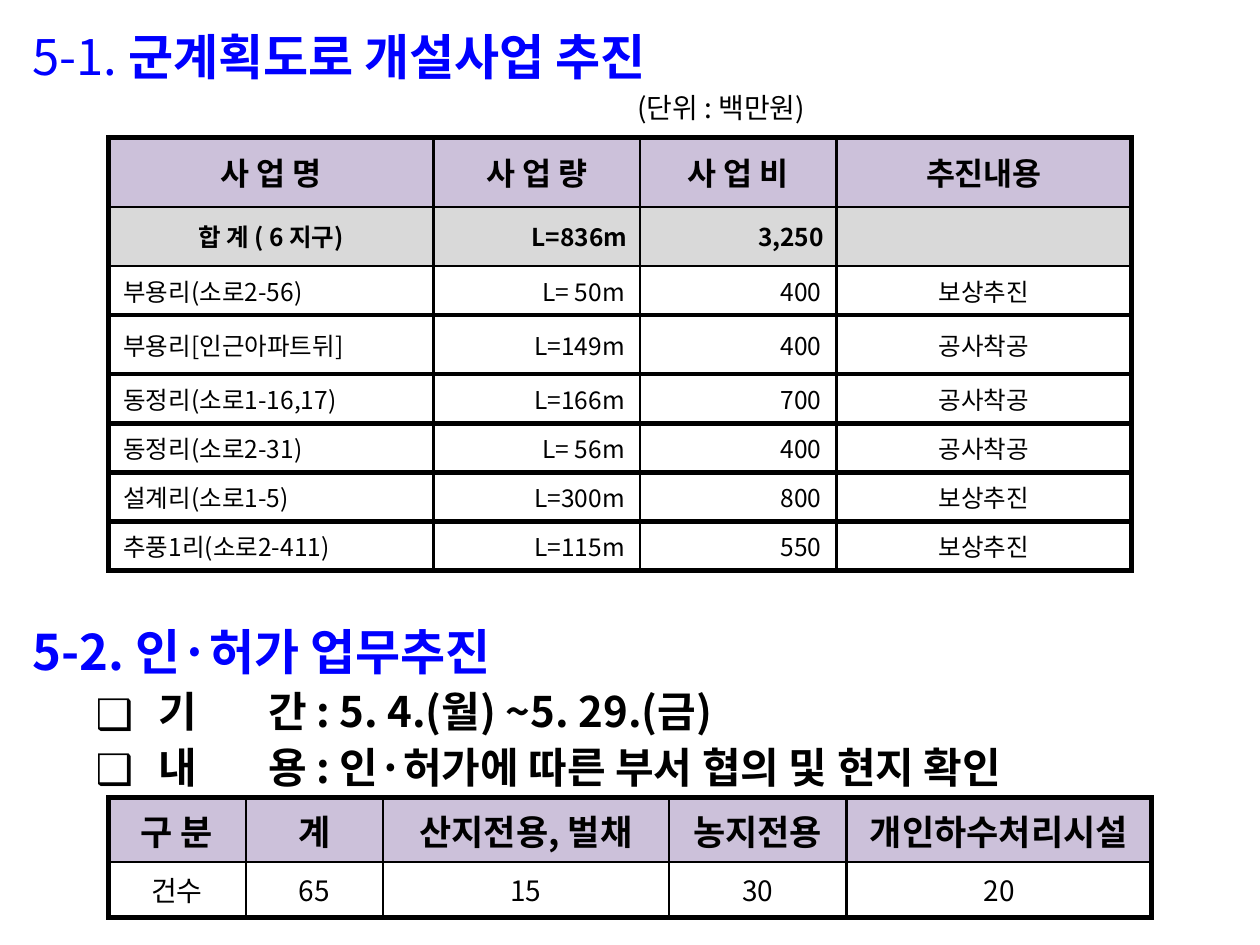
"""Build the county road and permit work slide."""
from lxml import etree
from pptx import Presentation
from pptx import util as u
from pptx.dml.color import RGBColor
from pptx.enum import text
from pptx.oxml.ns import qn

FONT = "Noto Sans CJK KR"
COLORS = {"title": "0000FF", "ink": "000000", "head": "CCC1DA", "total": "D9D9D9"}
THICK, THIN = 3, 1.41
LEFT, CENTER, RIGHT = text.PP_ALIGN.LEFT, text.PP_ALIGN.CENTER, text.PP_ALIGN.RIGHT

ROADS = [
    ("사 업 명", "사 업 량", "사 업 비", "추진내용"),
    ("합 계 ( 6 지구)", "L=836m", "3,250", ""),
    ("부용리(소로2-56)", "L= 50m", "400", "보상추진"),
    ("부용리[인근아파트뒤]", "L=149m", "400", "공사착공"),
    ("동정리(소로1-16,17)", "L=166m", "700", "공사착공"),
    ("동정리(소로2-31)", "L= 56m", "400", "공사착공"),
    ("설계리(소로1-5)", "L=300m", "800", "보상추진"),
    ("추풍1리(소로2-411)", "L=115m", "550", "보상추진"),
]
PERMITS = [
    ("구 분", "계", "산지전용, 벌채", "농지전용", "개인하수처리시설"),
    ("건수", "65", "15", "30", "20"),
]
ROAD_STYLES = [
    dict(size=18, bold=True, fill="head", aligns=[CENTER] * 4),
    dict(size=14, bold=True, fill="total", aligns=[CENTER, RIGHT, RIGHT, CENTER]),
] + [dict(size=14, inset=0.12, aligns=[LEFT, RIGHT, RIGHT, CENTER])] * 6
PERMIT_STYLES = [
    dict(size=20, bold=True, fill="head", aligns=[CENTER] * 5),
    dict(size=16, aligns=[CENTER] * 5),
]
DETAILS = ["기\t간 : 5. 4.(월) ~5. 29.(금)", "내\t용 : 인·허가에 따른 부서 협의 및 현지 확인"]


def write(p, words, size=14, bold=False, color="ink", align=LEFT, before=0, spacing=None,
          margin=0, hang=0, bullet=None, tab=None):
    pPr = p._p.get_or_add_pPr()
    pPr.set("marL", str(u.Inches(margin)))
    pPr.set("indent", str(-u.Inches(hang)))
    if bullet:
        clr = etree.SubElement(pPr, qn("a:buClr"))
        etree.SubElement(clr, qn("a:srgbClr"), val=COLORS[color])
        etree.SubElement(pPr, qn("a:buFont"), typeface=FONT)
        etree.SubElement(pPr, qn("a:buChar"), char=bullet)
    if tab:
        tabs = etree.SubElement(pPr, qn("a:tabLst"))
        etree.SubElement(tabs, qn("a:tab"), pos=str(u.Inches(tab)), algn="l")
    p.alignment = align
    p.space_before = u.Pt(before)
    if spacing:
        p.line_spacing = spacing
    add_run(p, words, size, bold, color)


def add_run(p, words, size, bold, color):
    r = p.add_run()
    r.text = words
    r.font.size, r.font.bold, r.font.name = u.Pt(size), bold, FONT
    r.font.color.rgb = RGBColor.from_string(COLORS[color])
    etree.SubElement(r._r.get_or_add_rPr(), qn("a:ea"), typeface=FONT)


def add_text(s, *box):
    tf = s.shapes.add_textbox(*map(u.Inches, box)).text_frame
    tf.word_wrap = True
    return tf


def add_borders(cell, **weights):
    tcPr = cell._tc.get_or_add_tcPr()
    for i, side in enumerate("LRTB"):
        ln = etree.Element(qn("a:ln" + side), w=str(u.Pt(weights[side])))
        fill = etree.SubElement(ln, qn("a:solidFill"))
        etree.SubElement(fill, qn("a:srgbClr"), val=COLORS["ink"])
        tcPr.insert(i, ln)


def add_grid(s, rows, styles, left, top, widths, heights, rules):
    table = s.shapes.add_table(len(rows), len(widths), *map(
        u.Inches, (left, top, sum(widths), sum(heights)))).table
    table.first_row = table.horz_banding = False
    for col, width in zip(table.columns, widths):
        col.width = u.Inches(width)
    edges = [THICK] + [THIN] * (len(widths) - 1) + [THICK]
    for i, (row, style) in enumerate(zip(rows, styles)):
        table.rows[i].height = u.Inches(heights[i])
        for j, words in enumerate(row):
            cell = table.cell(i, j)
            cell.vertical_anchor = text.MSO_ANCHOR.MIDDLE
            cell.margin_left = cell.margin_right = u.Inches(style.get("inset", 0.1))
            if "fill" in style:
                cell.fill.solid()
                cell.fill.fore_color.rgb = RGBColor.from_string(COLORS[style["fill"]])
            else:
                cell.fill.background()
            add_borders(cell, L=edges[j], R=edges[j + 1], T=rules[i], B=rules[i + 1])
            if words:
                write(cell.text_frame.paragraphs[0], words, size=style["size"],
                      bold=style.get("bold", False), align=style["aligns"][j])


def main():
    prs = Presentation()
    prs.slide_width, prs.slide_height = u.Inches(10), u.Inches(7.5)
    s = prs.slides.add_slide(prs.slide_layouts[6])

    tf = add_text(s, 0.16, 0.16, 9.53, 0.9)
    p = tf.paragraphs[0]
    write(p, "5-1. ", size=28, color="title")
    add_run(p, "군계획도로 개설사업 추진", 28, True, "title")
    write(tf.add_paragraph(), "(단위 : 백만원)", size=16, before=3.2, margin=4.8)

    add_grid(s, ROADS, ROAD_STYLES, 0.86, 1.09, [2.58, 1.64, 1.56, 2.34],
             [0.55, 0.47, 0.39, 0.47] + [0.39] * 4, [THICK, THIN, THIN] + [THICK] * 6)

    tf = add_text(s, 0.16, 4.84, 9.61, 1.5)
    write(tf.paragraphs[0], "5-2. 인·허가 업무추진", size=28, bold=True, color="title", spacing=1.1)
    for line in DETAILS:
        write(tf.add_paragraph(), line, size=24, bold=True, spacing=1.1,
              margin=1, hang=0.5, bullet="❑", tab=1.87)

    add_grid(s, PERMITS, PERMIT_STYLES, 0.86, 6.33, [1.09, 1.09, 2.27, 1.41, 2.42],
             [0.51, 0.44], [THICK, THIN, THICK])
    prs.save("out.pptx")


if __name__ == "__main__":
    main()
